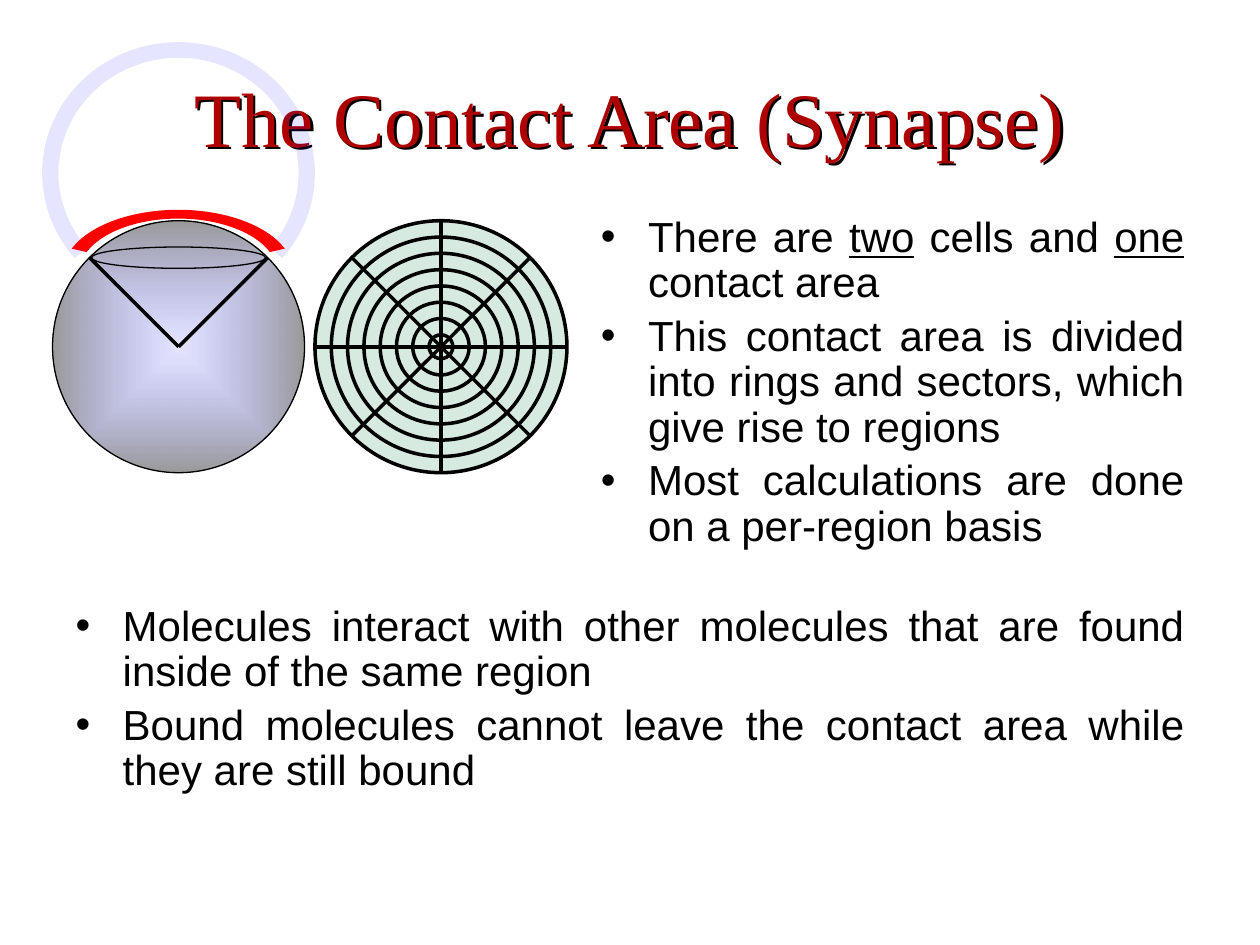
import math

from lxml import etree
from pptx import Presentation
from pptx.dml import color
from pptx.enum import shapes, text
from pptx.oxml import ns
from pptx.util import Cm, Pt

COLORS = {"title": "AF0000", "ink": "000000", "wheel": "339966",
          "cell": "0000FF", "contact": "FF0000"}
RIGHT_ITEMS = [
    [("There are ", False), ("two", True), (" cells and ", False),
     ("one", True), (" contact area", False)],
    [("This contact area is divided into rings and sectors, "
      "which give rise to regions", False)],
    [("Most calculations are done on a per-region basis", False)],
]
LOWER_ITEMS = [
    [("Molecules interact with other molecules that are found "
      "inside of the same region", False)],
    [("Bound molecules cannot leave the contact area while "
      "they are still bound", False)],
]


def rgb(name):
    return color.RGBColor.from_string(COLORS[name])


def add_xml(parent, tag, **attrs):
    return etree.SubElement(parent, ns.qn(tag), {k: str(v) for k, v in attrs.items()})


def add_run(p, words, size=24, font="Arial", fill="ink", underline=None):
    r = p.add_run()
    r.text = words
    r.font.size, r.font.name, r.font.underline = Pt(size), font, underline
    r.font.color.rgb = rgb(fill)
    return r


def place(s, box):
    s.left, s.top, s.width, s.height = (Cm(v) for v in box)


def style(s, fill=None, alpha=None, line=None):
    s.shadow.inherit = False
    if fill:
        s.fill.solid()
        s.fill.fore_color.rgb = rgb(fill)
        if alpha:
            clr = s._element.spPr.find(ns.qn("a:solidFill"))[0]
            add_xml(clr, "a:alpha", val=alpha * 1000)
    else:
        s.fill.background()
    if line:
        s.line.color.rgb, s.line.width = rgb("ink"), Pt(line)
    else:
        s.line.fill.background()


def add_ellipse(parent, box, **fmt):
    s = parent.add_shape(shapes.MSO_SHAPE.OVAL, *(Cm(v) for v in box))
    style(s, **fmt)
    return s


def add_spoke(parent, cx, cy, angle, start, end):
    """Line along a direction, between two signed distances from the centre."""
    dx, dy = math.cos(math.radians(angle)), math.sin(math.radians(angle))
    s = parent.add_connector(
        shapes.MSO_CONNECTOR.STRAIGHT, Cm(cx + start * dx), Cm(cy + start * dy),
        Cm(cx + end * dx), Cm(cy + end * dy))
    s.line.color.rgb, s.line.width = rgb("ink"), Pt(2)
    add_xml(s._element.spPr, "a:effectLst")


def add_arc_band(parent, box, start, end, inner, **fmt):
    """Part of an elliptical ring; inner is the inner to outer size ratio."""
    left, top, width, height = (Cm(v) for v in box)
    builder = parent.build_freeform(left, top, scale=1.0)
    builder.add_line_segments([(left + width, top), (left + width, top + height),
                               (left, top + height)])
    s = builder.convert_to_shape()
    outline = s._element.spPr.find(".//" + ns.qn("a:path"))
    for child in list(outline):
        outline.remove(child)

    def add_step(tag, points):
        step = add_xml(outline, tag)
        for x, y in points:
            add_xml(step, "a:pt", x=round(width / 2 * (1 + x)), y=round(height / 2 * (1 + y)))

    def add_arc(ratio, first, last, opening):
        count = math.ceil(abs(last - first) / 70)
        turn = math.radians(last - first) / count
        pull = 4 / 3 * math.tan(turn / 4)
        for i in range(count):
            a = math.radians(first) + i * turn
            b = a + turn
            p0, p3 = [(ratio * math.cos(t), ratio * math.sin(t)) for t in (a, b)]
            if i == 0:
                add_step(opening, [p0])
            add_step("a:cubicBezTo", [(p0[0] - pull * p0[1], p0[1] + pull * p0[0]),
                                      (p3[0] + pull * p3[1], p3[1] - pull * p3[0]), p3])

    add_arc(inner, start, end, "a:moveTo")
    add_arc(1, end, start, "a:lnTo")
    add_xml(outline, "a:close")
    style(s, **fmt)


def add_title(s, box):
    place(s, box)
    s.fill.background()
    effects = add_xml(s._element.spPr, "a:effectLst")
    shadow = add_xml(effects, "a:outerShdw", dist=Pt(2), dir=2700000, algn="ctr")
    add_xml(shadow, "a:srgbClr", val=COLORS["ink"])
    tf = s.text_frame
    tf.vertical_anchor = text.MSO_ANCHOR.MIDDLE
    tf.auto_size = text.MSO_AUTO_SIZE.NONE
    p = tf.paragraphs[0]
    p.alignment = text.PP_ALIGN.CENTER
    add_run(p, "The Contact Area (Synapse)", size=44, font="Times New Roman", fill="title")


def add_bullets(s, box, items):
    place(s, box)
    tf = s.text_frame
    tf.auto_size = text.MSO_AUTO_SIZE.NONE
    for i, item in enumerate(items):
        p = tf.add_paragraph() if i else tf.paragraphs[0]
        p.alignment = text.PP_ALIGN.JUSTIFY
        p.line_spacing = 0.9
        p.space_before = Pt(4.8 if i else 0)
        pPr = p._p.get_or_add_pPr()
        pPr.set("marL", str(Cm(0.95)))
        pPr.set("indent", str(-Cm(0.95)))
        add_xml(pPr, "a:buChar", char="•")
        for words, underline in item:
            add_run(p, words, underline=underline)


def add_wheel(parent, box, rings=8, hub=0.48):
    """Contact area seen from above: rings and sectors."""
    left, top, size, _ = box
    cx, cy = left + size / 2, top + size / 2
    group = parent.add_group_shape().shapes
    for i in range(rings):
        d = size - i * (size - hub) / (rings - 1)
        add_ellipse(group, (cx - d / 2, cy - d / 2, d, d), line=2,
                    fill=None if i else "wheel", alpha=20)
    for angle in (90, 0):
        add_spoke(group, cx, cy, angle, -size / 2, size / 2)
    for angle in (45, -45, 135, -135):
        add_spoke(group, cx, cy, angle, 0, size / 2)


def add_cell(parent, box):
    """Shaded cell with the cone that marks off its contact area."""
    left, top, size, _ = box
    cx, cy = left + size / 2, top + size / 2
    s = add_ellipse(parent, box, line=0.75)
    grad = etree.Element(ns.qn("a:gradFill"), rotWithShape="1")
    stops = add_xml(grad, "a:gsLst")
    for pos, name, alpha in ((0, "cell", 10), (100, "ink", 40)):
        clr = add_xml(add_xml(stops, "a:gs", pos=pos * 1000), "a:srgbClr", val=COLORS[name])
        add_xml(clr, "a:alpha", val=alpha * 1000)
    add_xml(add_xml(grad, "a:path", path="shape"), "a:fillToRect",
            l=50000, t=50000, r=50000, b=50000)
    spPr = s._element.spPr
    spPr.replace(spPr.find(ns.qn("a:noFill")), grad)
    for angle in (-135, -45):
        add_spoke(parent, cx, cy, angle, 0, size / 2)
    add_ellipse(parent, (cx - 1.75, top + 0.53, 3.5, 0.43), line=0.75)


def add_second_cell(parent, box):
    """Outline of the other cell, with the contact zone below it."""
    left, top, width, _ = box
    group = parent.add_group_shape().shapes
    add_arc_band(group, box, 139.5, 400.5, 0.88, fill="cell", alpha=10)
    add_arc_band(group, (left + 0.42, top + 3.38, width - 0.85, 2.54),
                 202.5, 337.5, 0.86, fill="contact")


def main():
    prs = Presentation()
    prs.slide_width, prs.slide_height = Cm(25.4), Cm(19.05)
    slide = prs.slides.add_slide(prs.slide_layouts.get_by_name("Two Content"))
    title, right, lower = slide.placeholders
    add_title(title, (1.27, 0.76, 22.86, 3.18))
    add_bullets(right, (11.86, 4.23, 12.27, 7.62), RIGHT_ITEMS)
    add_bullets(lower, (1.27, 12.07, 22.86, 5.08), LOWER_ITEMS)
    add_wheel(slide.shapes, (6.35, 4.45, 5.08, 5.08))
    add_cell(slide.shapes, (1.06, 4.45, 5.08, 5.08))
    add_second_cell(slide.shapes, (0.85, 0.85, 5.5, 5.28))
    prs.save("out.pptx")


if __name__ == "__main__":
    main()
